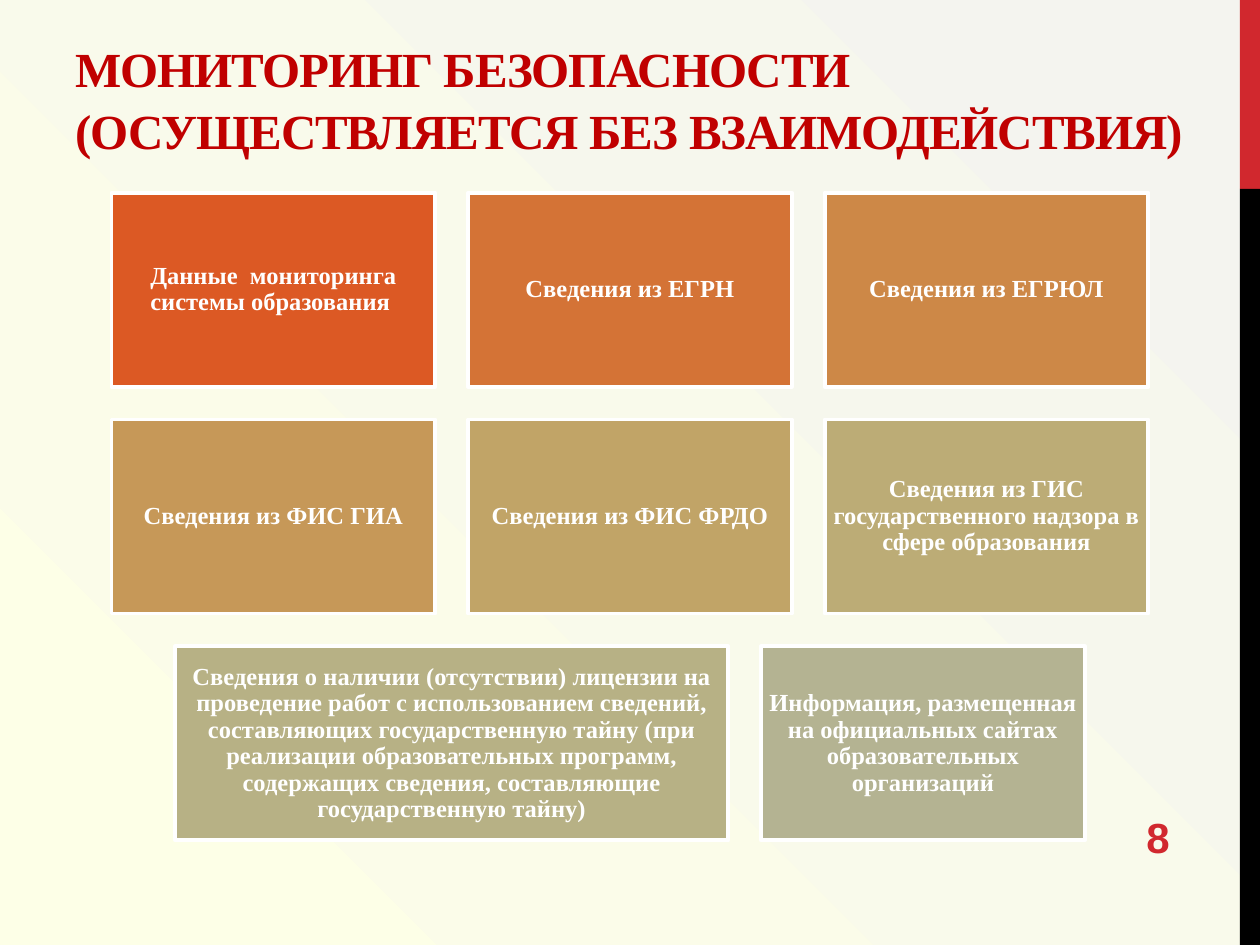
from pptx import Presentation
from pptx.dml.color import RGBColor
from pptx.enum.shapes import MSO_SHAPE
from pptx.enum.text import MSO_ANCHOR, PP_ALIGN
from pptx.oxml.ns import qn
from pptx.util import Inches, Pt
from lxml import etree

RECT = MSO_SHAPE.RECTANGLE
MIDDLE, BOTTOM = MSO_ANCHOR.MIDDLE, MSO_ANCHOR.BOTTOM
LEFT, CENTER = PP_ALIGN.LEFT, PP_ALIGN.CENTER
SERIF, SANS = "Times New Roman", "Arial"

COLORS = {
    "cream": "FDFFE7",
    "mist": "F4F4EF",
    "red": "D1282E",
    "black": "000000",
    "title": "C00000",
    "white": "FFFFFF",
}

CENTER_X, TOP = 5, 1.53
BOX_WIDTH, WIDE_WIDTH, BOX_HEIGHT, GAP = 2.57, 4.39, 1.54, 0.26

# Each row holds (text, fill, width) for its boxes.
ROWS = [
    [
        ("Данные  мониторинга системы образования ", "DC5924", BOX_WIDTH),
        ("Сведения из ЕГРН", "D47336", BOX_WIDTH),
        ("Сведения из ЕГРЮЛ", "CD8847", BOX_WIDTH),
    ],
    [
        ("Сведения из ФИС ГИА", "C69858", BOX_WIDTH),
        ("Сведения из ФИС ФРДО", "C1A467", BOX_WIDTH),
        ("Сведения из ГИС государственного надзора в сфере образования",
         "BCAC76", BOX_WIDTH),
    ],
    [
        ("Сведения о наличии (отсутствии) лицензии на проведение работ "
         "с использованием сведений, составляющих государственную тайну "
         "(при реализации образовательных программ, содержащих сведения, "
         "составляющие государственную тайну)", "B7B185", WIDE_WIDTH),
        ("Информация, размещенная на официальных сайтах образовательных "
         "организаций", "B4B392", BOX_WIDTH),
    ],
]


def rgb(value):
    return RGBColor.from_string(value)


def set_background(page):
    """Circular gradient that spreads from the lower left corner."""
    fill = page.background.fill
    fill.gradient()
    stops = zip(fill.gradient_stops, (("cream", 0), ("mist", 0.99)))
    for stop, (color, position) in stops:
        stop.color.rgb = rgb(COLORS[color])
        stop.position = position
    gradient = next(page.element.iter(qn("a:gradFill")))
    linear = gradient.find(qn("a:lin"))
    circle = etree.Element(qn("a:path"), {"path": "circle"})
    etree.SubElement(circle, qn("a:fillToRect"),
                     {"t": "100000", "r": "100000"})
    gradient.replace(linear, circle)


def write_text(shape, text, *, size, color, font=SERIF, align=LEFT,
               anchor=MIDDLE, line_spacing=1, spacing=0, inset=None):
    """Fill a shape with bold text; spacing is in points between letters."""
    frame = shape.text_frame
    frame.word_wrap = True
    frame.vertical_anchor = anchor
    if inset is not None:
        frame.margin_left = frame.margin_right = Inches(inset)
        frame.margin_top = frame.margin_bottom = Inches(inset)
    para = frame.paragraphs[0]
    para.text = text
    para.alignment = align
    para.line_spacing = line_spacing
    for span in para.runs:
        span.font.name = font
        span.font.size = Pt(size)
        span.font.bold = True
        span.font.color.rgb = rgb(color)
        if spacing:
            span.font._element.set("spc", str(round(spacing * 100)))


def add_text(page, text, left, top, width, height, **style):
    box = page.shapes.add_textbox(Inches(left), Inches(top),
                                  Inches(width), Inches(height))
    write_text(box, text, **style)


def add_rect(page, left, top, width, height, fill, line=None):
    rect = page.shapes.add_shape(RECT, Inches(left), Inches(top),
                                 Inches(width), Inches(height))
    rect.shadow.inherit = False
    rect.fill.solid()
    rect.fill.fore_color.rgb = rgb(fill)
    if line:
        rect.line.color.rgb = rgb(line)
        rect.line.width = Pt(2.25)
    else:
        rect.line.fill.background()
    return rect


def add_row(page, row, top):
    """Place one row of boxes, centred on the grid."""
    total = sum(width for _, _, width in row) + GAP * (len(row) - 1)
    left = CENTER_X - total / 2
    for text, fill, width in row:
        box = add_rect(page, left, top, width, BOX_HEIGHT, fill,
                       line=COLORS["white"])
        write_text(box, text, size=14, color=COLORS["white"], align=CENTER,
                   line_spacing=0.9, inset=0.06)
        left += width + GAP


def main():
    deck = Presentation()
    deck.slide_width, deck.slide_height = Inches(10), Inches(7.5)
    page = deck.slides.add_slide(deck.slide_layouts[6])
    set_background(page)
    add_rect(page, 9.84, 0, 0.16, 1.5, COLORS["red"])
    add_rect(page, 9.84, 1.5, 0.16, 6, COLORS["black"])
    add_text(page,
             "МОНИТОРИНГ БЕЗОПАСНОСТИ \v(ОСУЩЕСТВЛЯЕТСЯ БЕЗ ВЗАИМОДЕЙСТВИЯ)",
             0.5, 0.17, 9.3, 1.14, size=28, color=COLORS["title"],
             anchor=BOTTOM, line_spacing=1.05, spacing=-0.6)
    for index, row in enumerate(ROWS):
        add_row(page, row, TOP + index * (BOX_HEIGHT + GAP))
    add_text(page, "8", 9, 6.44, 1.44, 0.4, size=24, font=SANS,
             color=COLORS["red"])
    deck.save("out.pptx")


if __name__ == "__main__":
    main()
